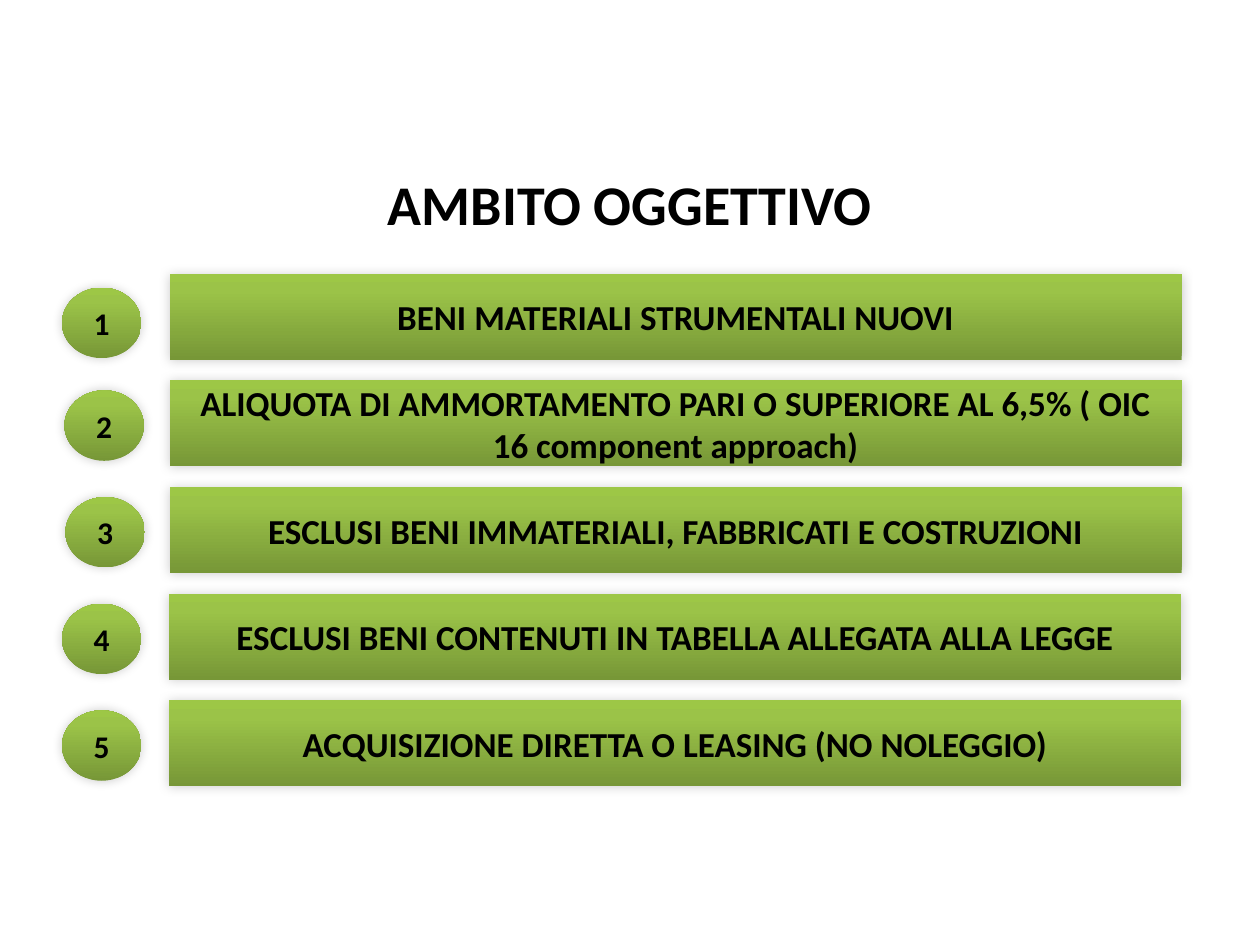
from copy import deepcopy
from dataclasses import dataclass

from lxml import etree
from pptx import Presentation
from pptx import util as u
from pptx.dml.color import RGBColor
from pptx.enum import shapes, text
from pptx.oxml import ns


@dataclass(frozen=True)
class Theme:
    font: str = "Calibri"
    ink: str = "000000"
    gradient: tuple = ((0, "779737"), (0.8, "9BC348"), (1, "9DC746"))
    title_pt: int = 32
    bar_pt: int = 20
    number_pt: int = 18


theme = Theme()


def write(s, content, size, bold=True, color=theme.ink):
    tf = s.text_frame
    tf.word_wrap = True
    tf.auto_size = text.MSO_AUTO_SIZE.NONE
    tf.vertical_anchor = text.MSO_ANCHOR.MIDDLE
    p = tf.paragraphs[0]
    p.alignment = text.PP_ALIGN.CENTER
    r = p.add_run()
    r.text = content
    r.font.name, r.font.size, r.font.bold = theme.font, u.Pt(size), bold
    r.font.color.rgb = RGBColor.from_string(color)


def style(s):
    """Green vertical gradient, no outline, soft shadow."""
    s.line.fill.background()
    s.fill.gradient()
    s.fill.gradient_angle = 90
    stops = s.element.spPr.find(".//" + ns.qn("a:gsLst"))
    stops.append(deepcopy(stops[0]))
    for stop, (position, color) in zip(s.fill.gradient_stops, theme.gradient):
        stop.position = position
        stop.color.rgb = RGBColor.from_string(color)
    s.shadow.inherit = False
    effects = s.element.spPr.find(ns.qn("a:effectLst"))
    shadow = etree.SubElement(effects, ns.qn("a:outerShdw"), blurRad=str(u.Pt(6)),
                              dist="0", dir="13500000", rotWithShape="0")
    black = etree.SubElement(shadow, ns.qn("a:srgbClr"), val=theme.ink)
    etree.SubElement(black, ns.qn("a:alpha"), val="20000")


prs = Presentation()
prs.slide_width, prs.slide_height = u.Cm(25.4), u.Cm(19.05)
slide = prs.slides.add_slide(prs.slide_layouts[5])

# Title
title = slide.shapes.title
title.left, title.top, title.width, title.height = u.Cm(0), u.Cm(3.28), u.Cm(25.4), u.Cm(1.63)
write(title, "AMBITO OGGETTIVO", theme.title_pt)

# Numbered bars: text, bar left, number left, number drop below the bar top
rows = [
    ("BENI MATERIALI STRUMENTALI NUOVI", 3.42, 1.25, 0.28),
    ("ALIQUOTA DI AMMORTAMENTO PARI O SUPERIORE AL 6,5% ( OIC 16 component approach)",
     3.42, 1.3, 0.2),
    ("ESCLUSI BENI IMMATERIALI, FABBRICATI E COSTRUZIONI", 3.42, 1.32, 0.2),
    ("ESCLUSI BENI CONTENUTI IN TABELLA ALLEGATA ALLA LEGGE", 3.41, 1.25, 0.2),
    ("ACQUISIZIONE DIRETTA O LEASING (NO NOLEGGIO)", 3.41, 1.25, 0.2),
]
first_top, pitch = 5.52, 2.15

for i, (label, bar_left, number_left, drop) in enumerate(rows):
    top = first_top + i * pitch
    bar = slide.shapes.add_shape(shapes.MSO_SHAPE.RECTANGLE, u.Cm(bar_left), u.Cm(top),
                                 u.Cm(20.4), u.Cm(1.73))
    style(bar)
    write(bar, label, theme.bar_pt)

    number = slide.shapes.add_shape(shapes.MSO_SHAPE.OVAL, u.Cm(number_left), u.Cm(top + drop),
                                    u.Cm(1.6), u.Cm(1.42))
    style(number)
    write(number, str(i + 1), theme.number_pt)

prs.save("out.pptx")
